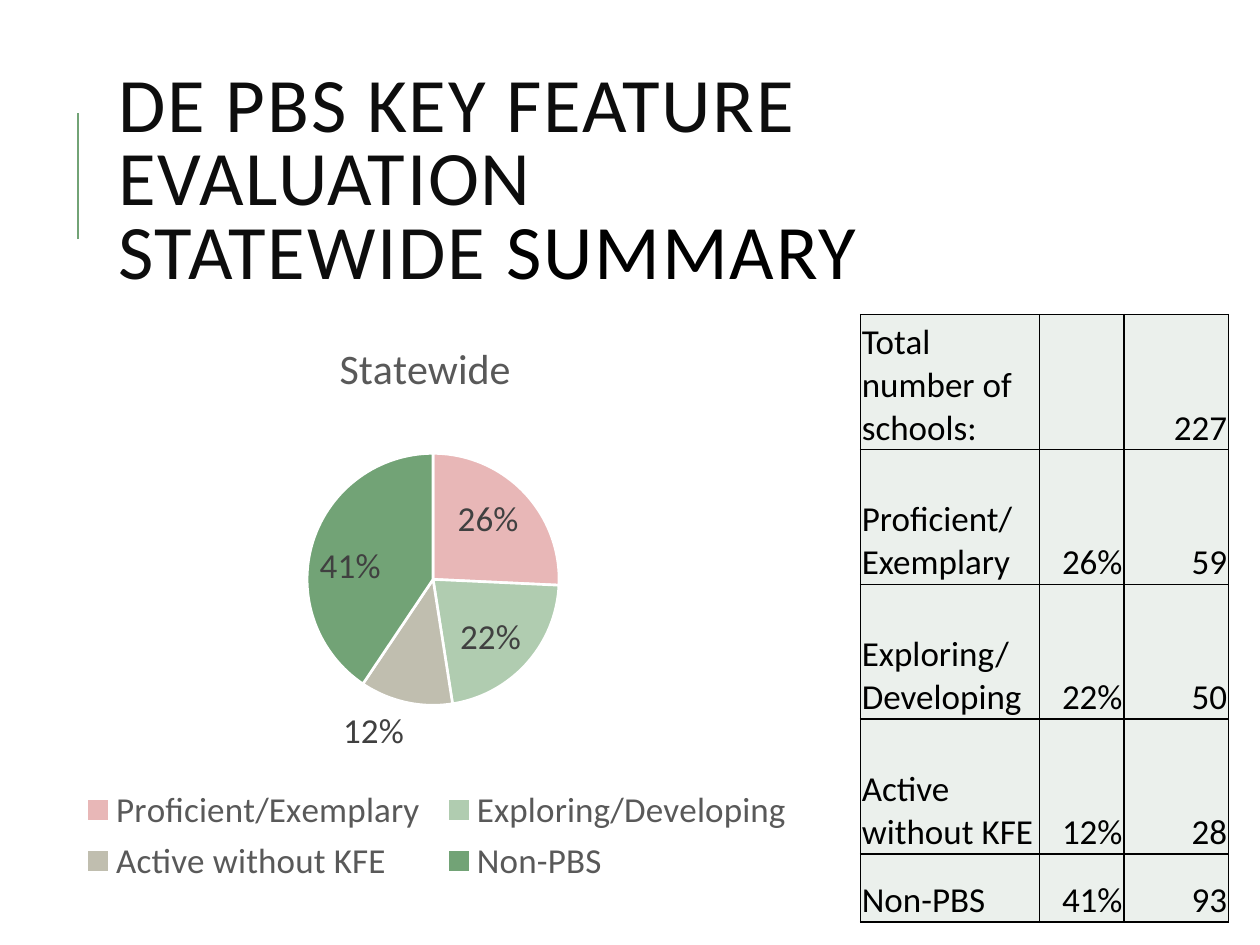
"""Build the statewide key feature evaluation slide with a pie chart and a table."""
from typing import NamedTuple

from lxml.etree import SubElement
from pptx import Presentation
from pptx.chart.data import CategoryChartData
from pptx.dml.color import RGBColor
from pptx.enum.chart import XL_CHART_TYPE as Chart, XL_LABEL_POSITION as Pos, XL_LEGEND_POSITION as Legend
from pptx.enum.shapes import MSO_CONNECTOR
from pptx.enum.text import MSO_ANCHOR, PP_ALIGN
from pptx.oxml import parse_xml
from pptx.oxml.ns import nsdecls, qn
from pptx.util import Inches, Pt

BLACK = RGBColor(0x00, 0x00, 0x00)
INK = RGBColor(0x0D, 0x0D, 0x0D)
LABEL = RGBColor(0x40, 0x40, 0x40)
GRAY = RGBColor(0x59, 0x59, 0x59)
PINK = RGBColor(0xE8, 0xB7, 0xB7)
MINT = RGBColor(0xB0, 0xCC, 0xB0)
STONE = RGBColor(0xC0, 0xBE, 0xAF)
GREEN = RGBColor(0x72, 0xA3, 0x76)
PALE = RGBColor(0xEB, 0xF0, 0xEC)
WHITE = RGBColor(0xFF, 0xFF, 0xFF)
FONT = "Calibri"
WIDTH, HEIGHT = Inches(10), Inches(7.5)


class Box(NamedTuple):
    """A rectangle as shares of its container."""
    x: float
    y: float
    w: float
    h: float

    def on_slide(self) -> list[int]:
        """Return left, top, width and height in EMU."""
        return [int(v * size) for v, size in zip(self, (WIDTH, HEIGHT) * 2)]


class Group(NamedTuple):
    """A group of schools, with its pie slice and table row."""
    name: str
    cell: str
    share: float
    count: int
    color: RGBColor
    position: Pos = Pos.INSIDE_END


GROUPS = [
    Group("Proficient/Exemplary", "Proficient/\nExemplary", 0.26, 59, PINK),
    Group("Exploring/Developing", "Exploring/\nDeveloping", 0.22, 50, MINT),
    Group("Active without KFE", "Active without KFE", 0.12, 28, STONE, Pos.OUTSIDE_END),
    Group("Non-PBS", "Non-PBS", 0.41, 93, GREEN),
]
TITLE = Box(0.084, 0.085, 0.797, 0.219)
RULE = Box(0.062, 0.12, 0, 0.133)
PIE = Box(0.025, 0.333, 0.625, 0.609)
PLOT = Box(0.35, 0.24, 0.32, 0.44)
LEGEND = Box(0.05, 0.81, 0.93, 0.19)
TABLE = Box(0.683, 0.333, 0.292, 0.643)
COLUMNS = (1.42, 0.67, 0.83)
ROWS = (1.07, 1.07, 1.07, 1.07, 0.54)


def set_font(font, size: float, color: RGBColor) -> None:
    """Apply the slide's typeface with a size and colour."""
    for key, value in {"name": FONT, "size": Pt(size), "bold": False}.items():
        setattr(font, key, value)
    font.color.rgb = color


def add_title(slide) -> None:
    """Fill and format the title placeholder."""
    sp = slide.shapes.title
    sp.left, sp.top, sp.width, sp.height = TITLE.on_slide()
    tf = sp.text_frame
    for key, value in {"vertical_anchor": MSO_ANCHOR.MIDDLE, "word_wrap": True}.items():
        setattr(tf, key, value)
    p = tf.paragraphs[0]
    p.alignment, p.line_spacing = PP_ALIGN.LEFT, 0.8
    for text, color in (("DE PBS KEY FEATURE EVALUATION ", INK), ("STATEWIDE ", INK), ("SUMMARY", BLACK)):
        if text.startswith("STATEWIDE"):
            p.add_line_break()
        r = p.add_run()
        r.text = text
        set_font(r.font, 44, color)
        r.font._element.set("spc", "100")


def add_rule(slide) -> None:
    """Draw the vertical accent line beside the title."""
    x, y, w, h = RULE.on_slide()
    line = slide.shapes.add_connector(MSO_CONNECTOR.STRAIGHT, x, y + h, x + w, y)
    line.line.color.rgb, line.line.width = GREEN, Pt(1.5)
    SubElement(line._element.spPr, qn("a:effectLst"))


def set_layout(element, box: Box, before: tuple[str, ...], inner: bool = False) -> None:
    """Place a chart part by shares of the chart area."""
    for old in element.findall(qn("c:layout")):
        element.remove(old)
    target = '<c:layoutTarget val="inner"/>' if inner else ""
    modes = "".join(f'<c:{k}Mode val="edge"/>' for k in "xy")
    sizes = "".join(f'<c:{k} val="{v}"/>' for k, v in zip("xywh", box))
    layout = parse_xml(f'<c:layout {nsdecls("c")}><c:manualLayout>{target}{modes}{sizes}'
                       '</c:manualLayout></c:layout>')
    next(e for e in element if e.tag in map(qn, before)).addprevious(layout)


def add_pie(slide) -> None:
    """Add the pie chart of shares."""
    data = CategoryChartData(number_format="0%")
    data.categories = [g.name for g in GROUPS]
    data.add_series("Series 1", [g.share for g in GROUPS])
    chart = slide.shapes.add_chart(Chart.PIE, *PIE.on_slide(), data).chart
    set_font(chart.font, 20, BLACK)
    chart.has_title = True
    p = chart.chart_title.text_frame.paragraphs[0]
    r = p.add_run()
    r.text = "Statewide"
    set_font(r.font, 24, GRAY)
    chart.has_legend = True
    legend = chart.legend
    legend.position, legend.include_in_layout = Legend.BOTTOM, False
    set_font(legend.font, 20, GRAY)
    set_layout(legend._element, LEGEND, ("c:overlay",))
    plot = chart.plots[0]
    plot.vary_by_categories = True
    set_layout(plot._element.getparent(), PLOT, ("c:pieChart",), True)
    series = plot.series[0]
    for i, group in enumerate(GROUPS):
        point = series.points[i]
        point.format.fill.solid()
        point.format.fill.fore_color.rgb = group.color
        point.format.line.color.rgb, point.format.line.width = WHITE, Pt(1.5)
        set_font(point.data_label.font, 20, LABEL)
        point.data_label.position = group.position
    labels = series.data_labels
    formats = {"show_value": True, "show_percentage": False, "number_format": "0%",
               "number_format_is_linked": False, "position": Pos.INSIDE_END}
    for key, value in formats.items():
        setattr(labels, key, value)
    set_font(labels.font, 20, LABEL)


def fill_cell(cell, text: str, align: PP_ALIGN) -> None:
    """Write and format one table cell with black borders."""
    side = Inches(0.01)
    formats = {"text": text, "vertical_anchor": MSO_ANCHOR.BOTTOM, "margin_left": side,
               "margin_right": side, "margin_top": side, "margin_bottom": 0}
    for key, value in formats.items():
        setattr(cell, key, value)
    for p in cell.text_frame.paragraphs:
        p.alignment = align
        set_font(p.font, 20, BLACK)
        for r in p.runs:
            set_font(r.font, 20, BLACK)
    tc_pr = cell._tc.get_or_add_tcPr()
    for edge in "LRTB":
        tc_pr.append(parse_xml(f'<a:ln{edge} {nsdecls("a")} w="{Pt(1)}"><a:solidFill>'
                               f'<a:srgbClr val="{BLACK}"/></a:solidFill></a:ln{edge}>'))
    cell.fill.solid()
    cell.fill.fore_color.rgb = PALE


def add_counts(slide) -> None:
    """Add the table of shares and school counts."""
    rows = [("Total number of schools:", "", "227")]
    rows += [(g.cell, f"{g.share:.0%}", str(g.count)) for g in GROUPS]
    table = slide.shapes.add_table(len(ROWS), len(COLUMNS), *TABLE.on_slide()).table
    table.first_row = table.horz_banding = False
    for column, width in zip(table.columns, COLUMNS):
        column.width = Inches(width)
    for i, (height, texts) in enumerate(zip(ROWS, rows)):
        table.rows[i].height = Inches(height)
        for j, text in enumerate(texts):
            fill_cell(table.cell(i, j), text, PP_ALIGN.RIGHT if j else PP_ALIGN.LEFT)


def main() -> None:
    """Build and save the slide."""
    prs = Presentation()
    prs.slide_width, prs.slide_height = WIDTH, HEIGHT
    slide = prs.slides.add_slide(prs.slide_layouts[5])
    for add in (add_rule, add_counts, add_title, add_pie):
        add(slide)
    prs.save("out.pptx")


if __name__ == "__main__":
    main()
